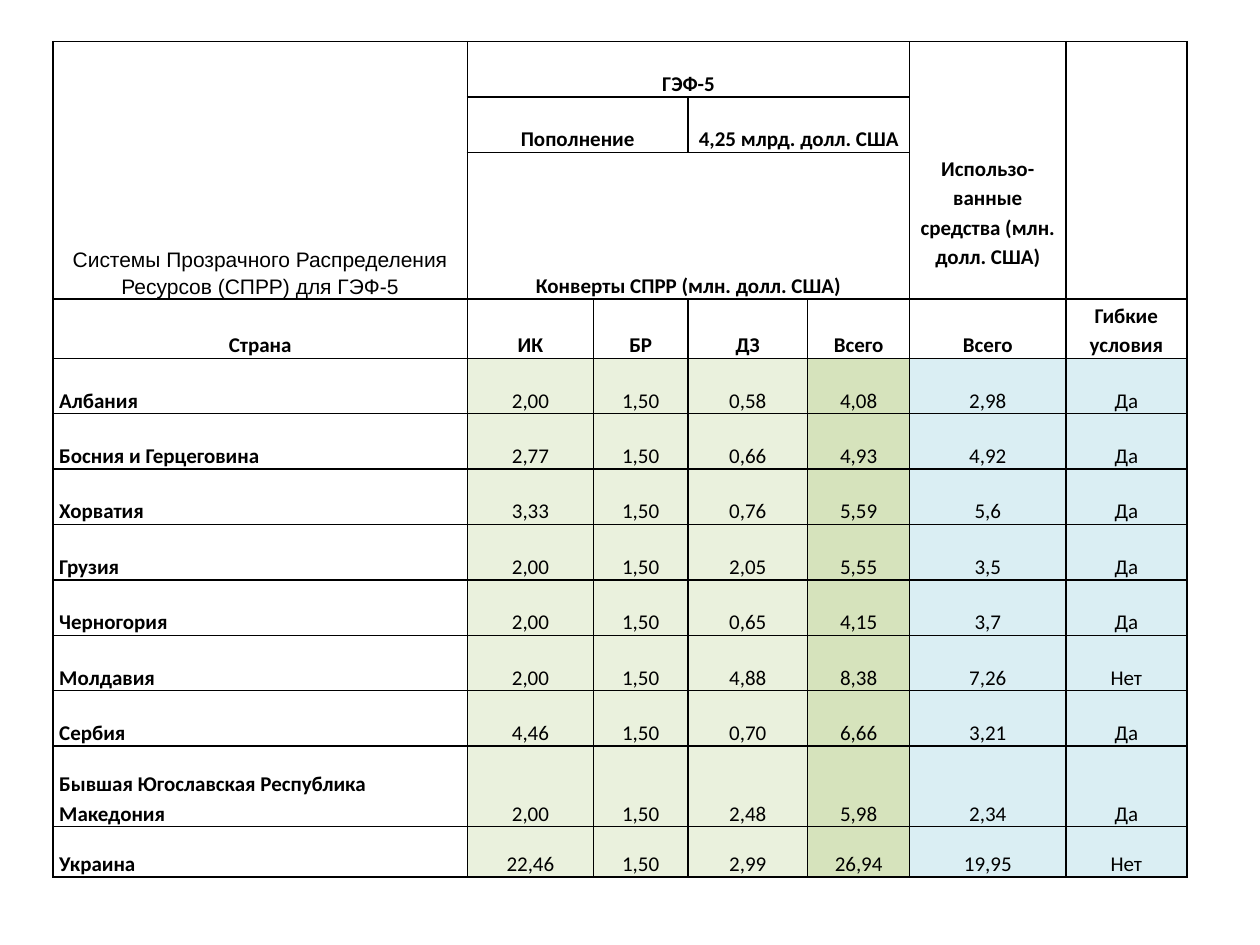
from dataclasses import dataclass

import pptx
import pptx.dml.color
import pptx.enum.text
import pptx.oxml
import pptx.oxml.ns
import pptx.table
import pptx.util

ALIGN = pptx.enum.text.PP_ALIGN


@dataclass(frozen=True)
class Theme:
    text: str = "000000"
    paper: str = "FFFFFF"
    envelope: str = "EAF1DD"
    envelope_total: str = "D6E3BC"
    used: str = "DAEEF3"
    border: str = "000000"
    border_width: float = 1
    size: float = 12
    line_spacing: float = 1.15
    side_margin: float = 0.05
    font: str = "Calibri"
    title_font: str = "Arial"


@dataclass(frozen=True)
class Header:
    """A header cell: its place on the table grid, its span and its wording."""
    row: int
    column: int
    text: str
    rows: int = 1
    columns: int = 1
    bold: bool = True
    font: str = "Calibri"
    bottom_margin: float = 0


THEME = Theme()
SLIDE_WIDTH, SLIDE_HEIGHT = 10, 7.5
TABLE_LEFT, TABLE_TOP = 0.042 * SLIDE_WIDTH, 0.044 * SLIDE_HEIGHT
COLUMN_WIDTHS = [3.29, 1, 0.75, 0.95, 0.81, 1.24, 0.96]
ROW_HEIGHTS = [0.44, 0.44, 1.13, 0.47] + [0.44] * 7 + [0.64, 0.4]
HEADER_ROWS = 4
COLUMN_FILLS = [THEME.paper] + [THEME.envelope] * 3 + [THEME.envelope_total] + [THEME.used] * 2

COLUMN_NAMES = ["Страна", "ИК", "БР", "ДЗ", "Всего", "Всего", "Гибкие условия"]
HEADERS = [
    Header(0, 0, "Системы Прозрачного Распределения Ресурсов (СПРР) для ГЭФ-5",
           rows=3, bold=False, font=THEME.title_font),
    Header(0, 1, "ГЭФ-5", columns=4),
    Header(0, 5, "Использо-\nванные средства (млн. долл. США)", rows=3, bottom_margin=0.23),
    Header(0, 6, "", rows=3),
    Header(1, 1, "Пополнение", columns=2),
    Header(1, 3, "4,25 млрд. долл. США", columns=2),
    Header(2, 1, "Конверты СПРР (млн. долл. США)", columns=4),
] + [Header(3, column, name) for column, name in enumerate(COLUMN_NAMES)]

COUNTRIES = [
    ("Албания", "2,00", "1,50", "0,58", "4,08", "2,98", "Да"),
    ("Босния и Герцеговина", "2,77", "1,50", "0,66", "4,93", "4,92", "Да"),
    ("Хорватия", "3,33", "1,50", "0,76", "5,59", "5,6", "Да"),
    ("Грузия", "2,00", "1,50", "2,05", "5,55", "3,5", "Да"),
    ("Черногория", "2,00", "1,50", "0,65", "4,15", "3,7", "Да"),
    ("Молдавия", "2,00", "1,50", "4,88", "8,38", "7,26", "Нет"),
    ("Сербия", "4,46", "1,50", "0,70", "6,66", "3,21", "Да"),
    ("Бывшая Югославская Республика Македония", "2,00", "1,50", "2,48", "5,98", "2,34", "Да"),
    ("Украина", "22,46", "1,50", "2,99", "26,94", "19,95", "Нет"),
]


def style_cell(cell: pptx.table._Cell, fill: str) -> None:
    properties = cell._tc.get_or_add_tcPr()
    width = pptx.util.Pt(THEME.border_width)
    for side in ("lnL", "lnR", "lnT", "lnB"):
        properties.append(pptx.oxml.parse_xml(
            f'<a:{side} {pptx.oxml.ns.nsdecls("a")} w="{width}"><a:solidFill>'
            f'<a:srgbClr val="{THEME.border}"/></a:solidFill></a:{side}>'))
    cell.fill.solid()
    cell.fill.fore_color.rgb = pptx.dml.color.RGBColor.from_string(fill)
    cell.vertical_anchor = pptx.enum.text.MSO_ANCHOR.BOTTOM
    cell.margin_left = cell.margin_right = pptx.util.Inches(THEME.side_margin)
    cell.margin_top = cell.margin_bottom = 0


def write_cell(cell: pptx.table._Cell, text: str, bold: bool,
               alignment: ALIGN = ALIGN.CENTER, font: str = THEME.font) -> None:
    paragraph = cell.text_frame.paragraphs[0]
    paragraph.alignment = alignment
    paragraph.line_spacing = THEME.line_spacing
    for index, line in enumerate(text.splitlines()):
        if index:
            paragraph.add_line_break()
        run = paragraph.add_run()
        run.text = line
        run.font.name = font
        run.font.size = pptx.util.Pt(THEME.size)
        run.font.bold = bold
        run.font.color.rgb = pptx.dml.color.RGBColor.from_string(THEME.text)


def add_grid(slide: pptx.slide.Slide) -> pptx.table.Table:
    """Add the empty table with its sizes, fills and borders."""
    table = slide.shapes.add_table(
        len(ROW_HEIGHTS), len(COLUMN_WIDTHS),
        pptx.util.Inches(TABLE_LEFT), pptx.util.Inches(TABLE_TOP),
        pptx.util.Inches(sum(COLUMN_WIDTHS)), pptx.util.Inches(sum(ROW_HEIGHTS))).table
    table.first_row = table.horz_banding = False
    for column, width in zip(table.columns, COLUMN_WIDTHS):
        column.width = pptx.util.Inches(width)
    for row_index, (row, height) in enumerate(zip(table.rows, ROW_HEIGHTS)):
        row.height = pptx.util.Inches(height)
        for cell, fill in zip(row.cells, COLUMN_FILLS):
            style_cell(cell, THEME.paper if row_index < HEADER_ROWS else fill)
    return table


def add_header(table: pptx.table.Table, header: Header) -> None:
    cell = table.cell(header.row, header.column)
    if header.rows > 1 or header.columns > 1:
        cell.merge(table.cell(header.row + header.rows - 1, header.column + header.columns - 1))
    cell.margin_bottom = pptx.util.Inches(header.bottom_margin)
    write_cell(cell, header.text, header.bold, font=header.font)


def main() -> None:
    presentation = pptx.Presentation()
    presentation.slide_width = pptx.util.Inches(SLIDE_WIDTH)
    presentation.slide_height = pptx.util.Inches(SLIDE_HEIGHT)
    slide = presentation.slides.add_slide(presentation.slide_layouts[6])
    table = add_grid(slide)
    for header in HEADERS:
        add_header(table, header)
    for row, (country, *values) in enumerate(COUNTRIES, start=HEADER_ROWS):
        write_cell(table.cell(row, 0), country, bold=True, alignment=ALIGN.LEFT)
        for column, value in enumerate(values, start=1):
            write_cell(table.cell(row, column), value, bold=False)
    presentation.save("out.pptx")


if __name__ == "__main__":
    main()
